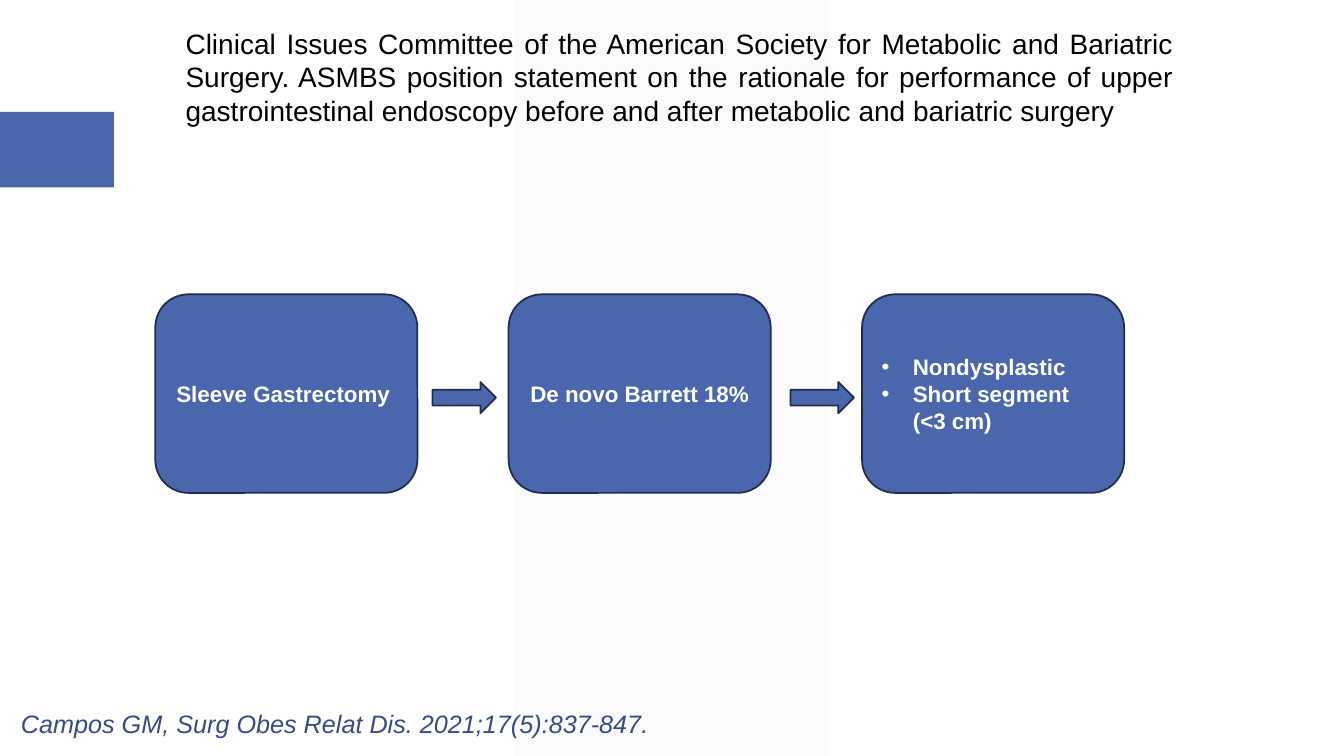
import lxml.etree
import pptx
import pptx.dml.color
import pptx.enum.shapes
import pptx.enum.text
import pptx.oxml.ns
import pptx.util

Inches = pptx.util.Inches
SHAPES = pptx.enum.shapes.MSO_SHAPE
ALIGN = pptx.enum.text.PP_ALIGN
ANCHOR = pptx.enum.text.MSO_ANCHOR
COLORS = {
    "blue": "4A66AC",
    "outline": "202D4B",
    "citation": "384C81",
    "band": "F2F2F2",
    "black": "000000",
    "white": "FFFFFF",
}
TITLE = (
    "Clinical Issues Committee of the American Society for Metabolic and Bariatric Surgery. "
    "ASMBS position statement on the rationale for performance of upper gastrointestinal "
    "endoscopy before and after metabolic and bariatric surgery"
)
CITATION = "Campos GM, Surg Obes Relat Dis. 2021;17(5):837-847."
STEPS = [
    ["Sleeve Gastrectomy "],
    ["De novo Barrett 18%"],
    ["Nondysplastic", "Short segment (<3 cm)"],
]
TITLE_FORMAT = {"size": pptx.util.Pt(20), "bold": False}
STEP_FORMAT = {"size": pptx.util.Pt(16), "bold": True}
CITATION_FORMAT = {"size": pptx.util.Pt(18), "italic": True}


def color(name):
    return pptx.dml.color.RGBColor.from_string(COLORS[name])


def add_filled_shape(slide, kind, box, fill, outline=None):
    shape = slide.shapes.add_shape(kind, *map(Inches, box))
    shape.shadow.inherit = False
    shape.fill.solid()
    shape.fill.fore_color.rgb = color(fill)
    if outline:
        shape.line.color.rgb = color(outline)
        shape.line.width = pptx.util.Pt(1.25)
    else:
        shape.line.fill.background()
    return shape


def write_text(shape, lines, font_format, color_name, alignment):
    frame = shape.text_frame
    frame.word_wrap = True
    frame.text = "\n".join(lines)
    for paragraph in frame.paragraphs:
        paragraph.alignment = alignment
        font = paragraph.runs[0].font
        font.name = "Arial"
        font.color.rgb = color(color_name)
        for attribute, value in font_format.items():
            setattr(font, attribute, value)


def add_bullet(paragraph):
    properties = paragraph._p.get_or_add_pPr()
    properties.set("marL", str(Inches(0.31)))
    properties.set("indent", str(-Inches(0.31)))
    for tag, key, value in [("a:buFont", "typeface", "Arial"), ("a:buChar", "char", "•")]:
        lxml.etree.SubElement(properties, pptx.oxml.ns.qn(tag)).set(key, value)


def add_backdrop(slide, left, top, width, height):
    band = add_filled_shape(slide, SHAPES.PARALLELOGRAM, (left + 5.1, top, 3.12, height), "band")
    band.adjustments[0] = 0
    band_color = band.fill._xPr.find(".//" + pptx.oxml.ns.qn("a:srgbClr"))
    lxml.etree.SubElement(band_color, pptx.oxml.ns.qn("a:alpha")).set("val", "30000")
    add_filled_shape(slide, SHAPES.RECTANGLE, (left, top + 1.11, 1.13, 0.75), "blue")


def add_title(slide, left, top, width, height):
    title = slide.shapes.title
    slide.shapes._spTree.append(title._element)
    title.left, title.top, title.width, title.height = map(Inches, (left, top, width, height))
    write_text(title, [TITLE], TITLE_FORMAT, "black", ALIGN.JUSTIFY)
    title.text_frame.vertical_anchor = ANCHOR.TOP
    title.text_frame.auto_size = pptx.enum.text.MSO_AUTO_SIZE.NONE


def add_flow(slide, left, top, width, height):
    step_width = 2.6
    step_pitch = (width - step_width) / (len(STEPS) - 1)
    for index, lines in enumerate(STEPS):
        box = (left + index * step_pitch, top, step_width, height)
        step = add_filled_shape(slide, SHAPES.ROUNDED_RECTANGLE, box, "blue", "outline")
        is_list = len(lines) > 1
        write_text(step, lines, STEP_FORMAT, "white", ALIGN.LEFT if is_list else ALIGN.CENTER)
        step.text_frame.vertical_anchor = ANCHOR.MIDDLE
        if is_list:
            for paragraph in step.text_frame.paragraphs:
                add_bullet(paragraph)
    for index in range(len(STEPS) - 1):
        box = (left + 2.75 + index * 3.55, top + 0.87, 0.63, 0.31)
        add_filled_shape(slide, SHAPES.RIGHT_ARROW, box, "blue", "outline")


def add_citation(slide, left, top, width, height):
    citation = slide.shapes.add_textbox(*map(Inches, (left, top, width, height)))
    write_text(citation, [CITATION], CITATION_FORMAT, "citation", ALIGN.LEFT)


def main():
    presentation = pptx.Presentation()
    presentation.slide_width = Inches(13.33)
    presentation.slide_height = Inches(7.5)
    slide = presentation.slides.add_slide(presentation.slide_layouts[5])
    add_backdrop(slide, 0, 0, 13.33, 7.5)
    add_title(slide, 1.74, 0.21, 10, 1.11)
    add_flow(slide, 1.54, 2.92, 9.61, 1.97)
    add_citation(slide, 0.11, 6.98, 6.63, 0.4)
    presentation.save("out.pptx")


if __name__ == "__main__":
    main()
